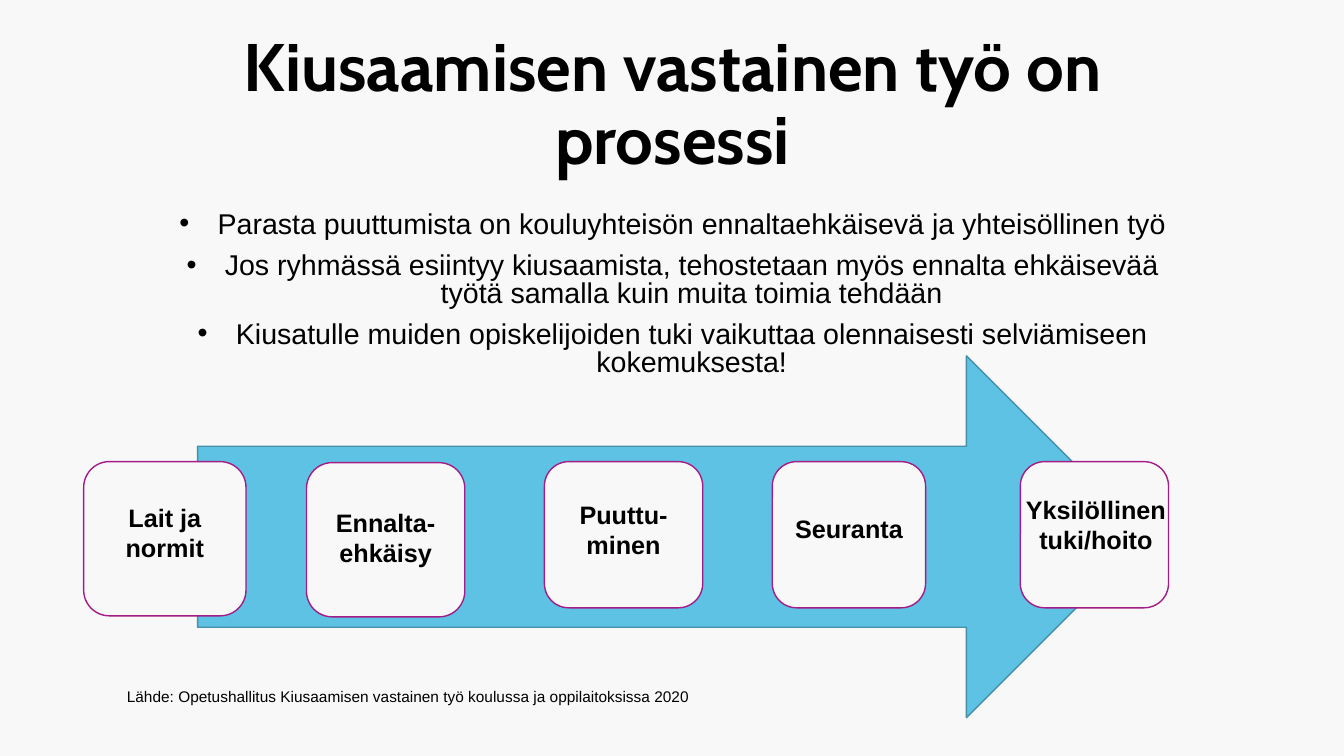
from lxml import etree
from pptx import Presentation
from pptx.dml.color import RGBColor
from pptx.enum.shapes import MSO_SHAPE
from pptx.enum.text import MSO_ANCHOR, PP_ALIGN
from pptx.oxml.ns import qn
from pptx.util import Inches, Pt

BLACK = RGBColor(0x00, 0x00, 0x00)
PAPER = RGBColor(0xF8, 0xF8, 0xF8)
SKY = RGBColor(0x5E, 0xC2, 0xE4)
SKY_EDGE = RGBColor(0x46, 0x90, 0xA9)
PLUM = RGBColor(0xA3, 0x1C, 0x87)
CENTER, LEFT = PP_ALIGN.CENTER, PP_ALIGN.LEFT
TOP, MIDDLE = MSO_ANCHOR.TOP, MSO_ANCHOR.MIDDLE
ARROW, CARD = MSO_SHAPE.RIGHT_ARROW, MSO_SHAPE.ROUNDED_RECTANGLE

WIDTH, HEIGHT = 13.33, 7.5
CONTENT_LEFT, CONTENT_WIDTH, BAND_HEIGHT = 1.67, 10, 1.81
CARD_TOP = 4.58

TITLE = "Kiusaamisen vastainen työ on prosessi"
POINTS = [
    "Parasta puuttumista on kouluyhteisön ennaltaehkäisevä ja yhteisöllinen työ",
    "Jos ryhmässä esiintyy kiusaamista, tehostetaan myös ennalta ehkäisevää työtä samalla kuin muita toimia tehdään",
    "Kiusatulle muiden opiskelijoiden tuki vaikuttaa olennaisesti selviämiseen kokemuksesta!",
]
SOURCE = "Lähde: Opetushallitus Kiusaamisen vastainen työ koulussa ja oppilaitoksissa 2020"
STEPS = [
    (["Lait ja normit"], (0.83, CARD_TOP, 1.61, 1.53), (0.83, 4.93, 1.61, 0.71)),
    (["Ennalta-ehkäisy"], (3.04, CARD_TOP + 0.01, 1.57, 1.53), (3.04, 4.98, 1.57, 0.71)),
    (["Puuttu-minen"], (5.4, CARD_TOP, 1.57, 1.45), (5.4, 4.9, 1.57, 0.71)),
    (["Seuranta"], (7.66, CARD_TOP, 1.52, 1.45), (7.66, 5.04, 1.52, 0.41)),
    (["Yksilöllinen", "tuki/hoito"], (10.12, CARD_TOP, 1.47, 1.45), (10.04, 4.85, 1.66, 0.71)),
]


def add_text(slide, box, lines, size, font="Arial", bold=False,
             align=CENTER, anchor=TOP, spacing=1.0, bulleted=False):
    frame = slide.shapes.add_textbox(*map(Inches, box)).text_frame
    frame.word_wrap = True
    frame.vertical_anchor = anchor
    for index, line in enumerate(lines):
        paragraph = frame.add_paragraph() if index else frame.paragraphs[0]
        paragraph.alignment = align
        paragraph.line_spacing = spacing
        if bulleted:
            paragraph.space_before = Pt(10 if index else 0)
            add_bullet(paragraph)
        run = paragraph.add_run()
        run.text = line
        run.font.name = font
        run.font.size = Pt(size)
        run.font.bold = bold
        run.font.color.rgb = BLACK


def add_bullet(paragraph):
    properties = paragraph._p.get_or_add_pPr()
    properties.set("marL", str(Inches(0.38)))
    properties.set("indent", str(-Inches(0.38)))
    etree.SubElement(properties, qn("a:buFont")).set("typeface", "Arial")
    etree.SubElement(properties, qn("a:buChar")).set("char", "•")


def add_outlined(slide, kind, box, fill, edge):
    shape = slide.shapes.add_shape(kind, *map(Inches, box))
    shape.shadow.inherit = False
    shape.fill.solid()
    shape.fill.fore_color.rgb = fill
    shape.line.color.rgb = edge
    shape.line.width = Pt(1)


def add_heading(slide, box):
    add_text(slide, box, [TITLE], 48, font="Cabin", bold=True, anchor=MIDDLE, spacing=0.9)


def add_points(slide, box):
    add_text(slide, box, POINTS, 20.4, spacing=0.8, bulleted=True)


def add_process(slide, arrow_box):
    add_outlined(slide, ARROW, arrow_box, SKY, SKY_EDGE)
    for lines, card_box, label_box in STEPS:
        add_outlined(slide, CARD, card_box, PAPER, PLUM)
        add_text(slide, label_box, lines, 18, bold=True)


def add_source(slide, box):
    add_text(slide, box, [SOURCE], 11, align=LEFT)


def main():
    presentation = Presentation()
    presentation.slide_width = Inches(WIDTH)
    presentation.slide_height = Inches(HEIGHT)
    slide = presentation.slides.add_slide(presentation.slide_layouts[6])
    slide.background.fill.solid()
    slide.background.fill.fore_color.rgb = PAPER
    add_heading(slide, (CONTENT_LEFT, 0.15, CONTENT_WIDTH, BAND_HEIGHT))
    add_points(slide, (CONTENT_LEFT, 2.06, CONTENT_WIDTH, BAND_HEIGHT))
    add_process(slide, (1.96, 3.53, 9.42, 3.59))
    add_source(slide, (1.16, 6.77, 6.86, 0.29))
    presentation.save("out.pptx")


if __name__ == "__main__":
    main()
